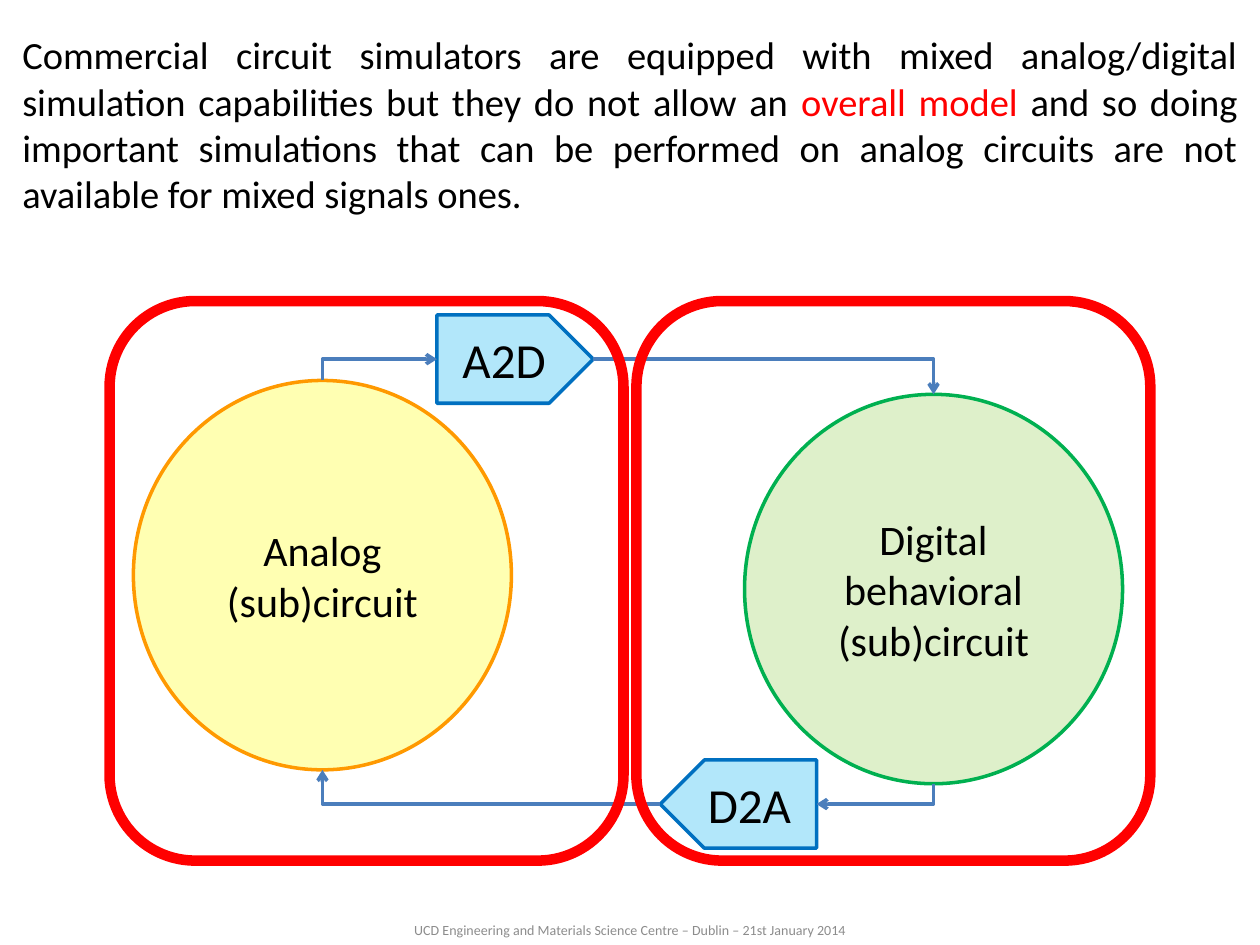
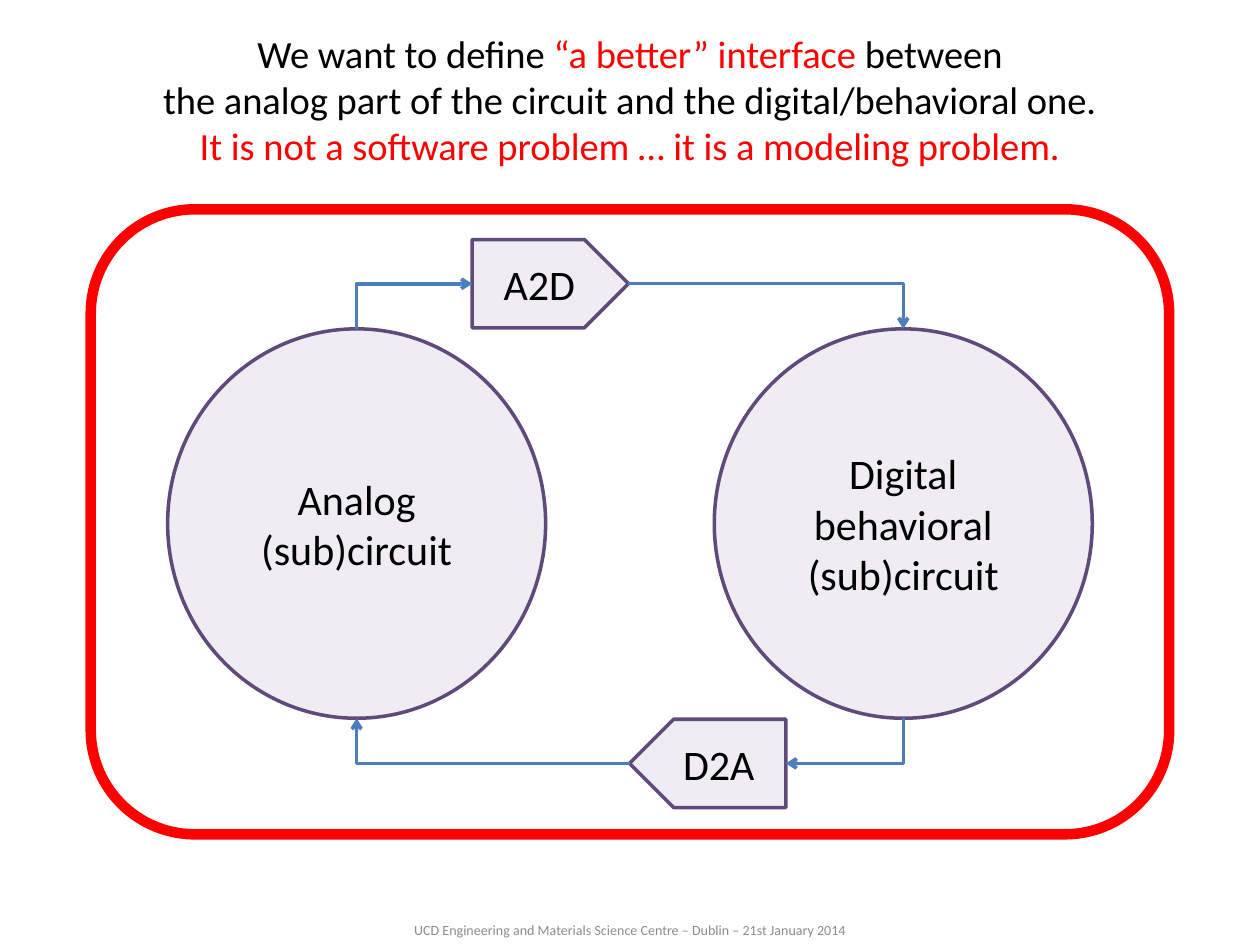
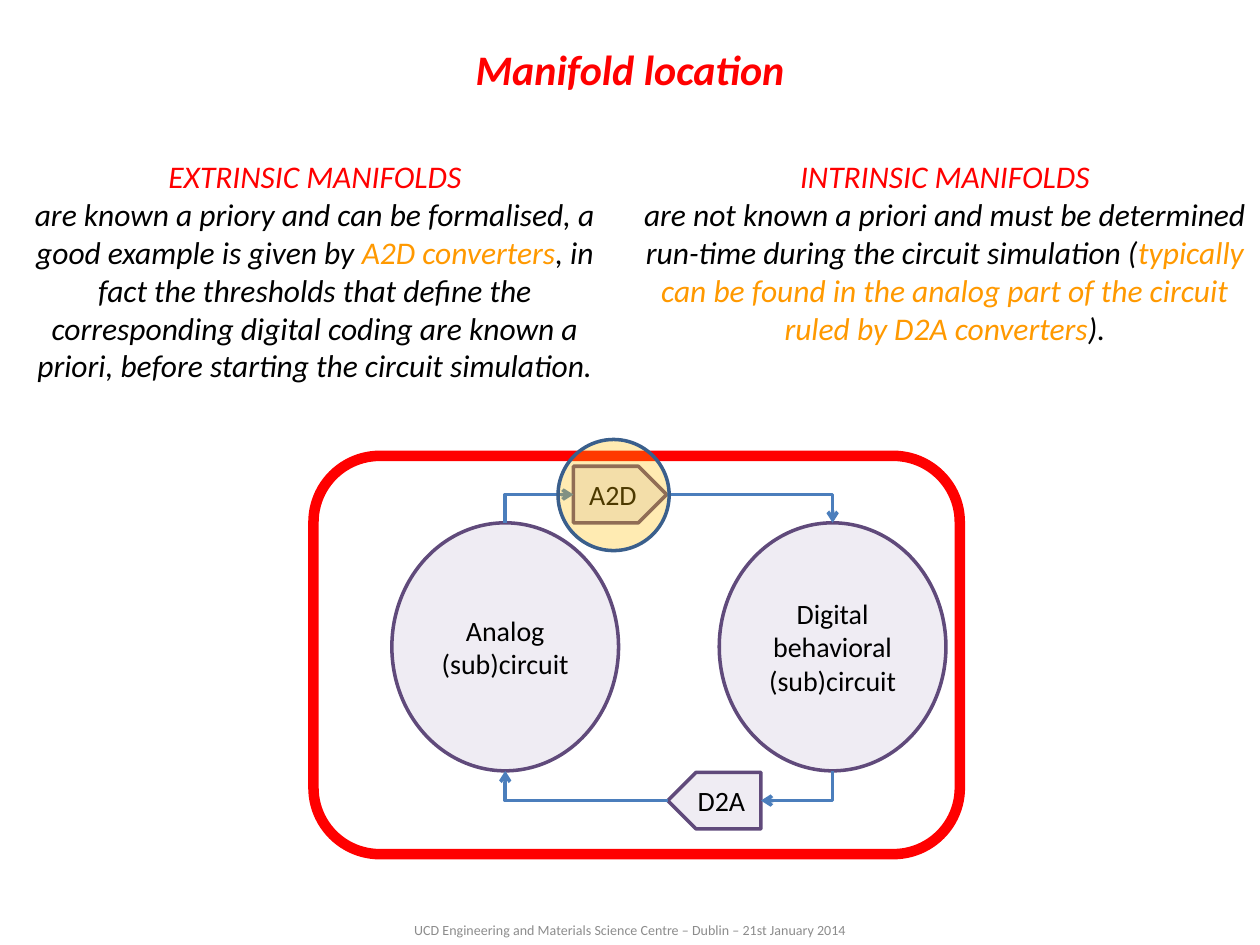
from lxml.etree import SubElement
from pptx import Presentation
from pptx.dml.color import RGBColor
from pptx.enum.shapes import MSO_CONNECTOR, MSO_SHAPE as SHAPE
from pptx.enum.text import MSO_ANCHOR as ANCHOR, PP_ALIGN as ALIGN
from pptx.oxml.ns import qn
from pptx.util import Cm, Pt

C = {"black": "000000", "white": "FFFFFF", "red": "FF0000", "orange": "FF9900",
     "grey": "8C8C8C", "yellow": "FFFF00", "lime": "92D050", "green": "00B050",
     "sky": "00B0F0", "blue": "0070C0", "lilac": "CCC1DA", "purple": "604A7B",
     "arrow": "4B7EBC", "amber": "FFC000", "navy": "3A5F8C"}
FONT = "Calibri"
FOOTER = "UCD Engineering and Materials Science Centre – Dublin – 21st January 2014"


def write(tf, paras, size, align=ALIGN.CENTER, anchor=ANCHOR.TOP, italic=False, bold=False):
    tf.word_wrap = True
    tf.vertical_anchor = anchor
    for i, runs in enumerate(paras):
        p = tf.paragraphs[0] if i == 0 else tf.add_paragraph()
        p.alignment = align
        for text, color in runs:
            r = p.add_run()
            r.text = text
            r.font.name, r.font.size = FONT, Pt(size)
            r.font.bold, r.font.italic = bold, italic
            r.font.color.rgb = RGBColor.from_string(C[color])


def add_box(s, kind, box, fill, line, width=2, alpha=30):
    sp = s.shapes.add_shape(kind, *[Cm(v) for v in box])
    sp.shadow.inherit = False
    sp.line.color.rgb = RGBColor.from_string(C[line])
    sp.line.width = Pt(width)
    if fill is None:
        sp.fill.background()
        return sp
    sp.fill.solid()
    sp.fill.fore_color.rgb = RGBColor.from_string(C[fill])
    if alpha < 100:
        color = sp.fill._xPr.find(qn("a:solidFill"))[0]
        SubElement(color, qn("a:alpha")).set("val", str(alpha * 1000))
    return sp


lilac = ("lilac", "purple")
slides = [
    {"title": None,
     "texts": [((0.2, 0.51, 25, 4.01), 22, ALIGN.JUSTIFY, False, [
         [("Commercial circuit simulators are equipped with mixed analog/digital simulation "
           "capabilities but they do not allow an ", "black"),
          ("overall model", "red"),
          (" and so doing important simulations that can be performed on analog circuits "
           "are not available for mixed signals ones.", "black")]])],
     "back": [],
     "circle": (7.62, 7.85), "plate": (3.15, 1.78), "sizes": (24, 28),
     "analog": (2.69, 7.67), "digital": (15.01, 7.95),
     "a2d": (8.81, 6.35), "d2a": (13.31, 15.32),
     "colors": [("yellow", "orange"), ("lime", "green"), ("sky", "blue")],
     "front": [(SHAPE.ROUNDED_RECTANGLE, (x, 6.07, 10.36, 11.28), None, "red", 6)
               for x in (2.21, 12.83)]},
    {"title": None,
     "texts": [((0.2, 0.48, 25, 3.07), 22, ALIGN.CENTER, False, [
         [("We want to define ", "black"), ("“a better” interface", "red"), (" between", "black")],
         [("the analog part of the circuit and the digital/behavioral one.", "black")],
         [("It is not a software problem … it is a modeling problem.", "red")]])],
     "back": [(SHAPE.ROUNDED_RECTANGLE, (1.83, 4.22, 21.74, 12.6), "white", "red", 6, 100)],
     "circle": (7.62, 7.85), "plate": (3.15, 1.78), "sizes": (24, 24),
     "analog": (3.38, 6.63), "digital": (14.4, 6.63),
     "a2d": (9.52, 4.83), "d2a": (12.69, 14.5),
     "colors": [lilac] * 3,
     "front": []},
    {"title": "Manifold location",
     "texts": [
         ((0, 3.05, 12.7, 4.87), 18, ALIGN.CENTER, True, [
             [("EXTRINSIC MANIFOLDS", "red")],
             [("are known a priory and can be formalised, a good example is given by ", "black"),
              ("A2D converters", "orange"),
              (", in fact the thresholds that deﬁne the corresponding digital coding are known "
               "a priori, before starting the circuit simulation.", "black")]]),
         ((12.7, 3.05, 12.7, 4.11), 18, ALIGN.CENTER, True, [
             [("INTRINSIC MANIFOLDS", "red")],
             [("are not known a priori and must be determined run-time during the circuit "
               "simulation (", "black"),
              ("typically can be found in the analog part of the circuit ruled by "
               "D2A converters", "orange"),
              (").", "black")]])],
     "back": [(SHAPE.ROUNDED_RECTANGLE, (6.32, 9.19, 13.03, 8.03), "white", "red", 6, 100)],
     "circle": (4.57, 5), "plate": (1.88, 1.14), "sizes": (16, 16),
     "analog": (7.9, 10.54), "digital": (14.5, 10.54),
     "a2d": (11.56, 9.4), "d2a": (13.46, 15.57),
     "colors": [lilac] * 3,
     "front": [(SHAPE.OVAL, (11.25, 8.86, 2.24, 2.24), "amber", "navy")]},
]

prs = Presentation()
prs.slide_width, prs.slide_height = Cm(25.4), Cm(19.05)

for d in slides:
    s = prs.slides.add_slide(prs.slide_layouts[5 if d["title"] else 6])
    if d["title"]:
        t = s.shapes.title
        t.left, t.top, t.width, t.height = Cm(0), Cm(0.56), Cm(25.4), Cm(1.65)
        write(t.text_frame, [[(d["title"], "red")]], 24, anchor=ANCHOR.MIDDLE, italic=True, bold=True)

    tb = s.shapes.add_textbox(Cm(1.57), Cm(18.44), Cm(22.28), Cm(0.61))
    write(tb.text_frame, [[(FOOTER, "grey")]], 8, anchor=ANCHOR.MIDDLE)
    for box, size, align, italic, paras in d["texts"]:
        tb = s.shapes.add_textbox(*[Cm(v) for v in box])
        write(tb.text_frame, paras, size, align, italic=italic)

    for args in d["back"]:
        add_box(s, *args)

    circle_size, plate_size = d["sizes"]
    analog, digital, plate = d["colors"]
    for key, label, kind, dims, size, colors in [
            ("analog", "Analog (sub)circuit", SHAPE.OVAL, d["circle"], circle_size, analog),
            ("digital", "Digital behavioral (sub)circuit", SHAPE.OVAL, d["circle"], circle_size, digital),
            ("a2d", "A2D", SHAPE.PENTAGON, d["plate"], plate_size, plate),
            ("d2a", "D2A", SHAPE.PENTAGON, d["plate"], plate_size, plate)]:
        sp = add_box(s, kind, d[key] + dims, *colors)
        write(sp.text_frame, [[(label, "black")]], size, anchor=ANCHOR.MIDDLE)
        if key == "d2a":
            sp.rotation = 180
            sp._element.spPr.find(qn("a:xfrm")).set("flipV", "1")

    cw, ch = d["circle"]
    pw, ph = d["plate"]
    ax, ay = d["analog"][0] + cw / 2, d["analog"][1]
    dx, dy = d["digital"][0] + cw / 2, d["digital"][1]
    tx, ty = d["a2d"][0], d["a2d"][1] + ph / 2
    bx, by = d["d2a"][0], d["d2a"][1] + ph / 2
    for x1, y1, x2, y2, rot in [(tx + pw, ty, dx, dy, 0),
                                (dx, dy + ch, bx + pw, by, 90),
                                (bx, by, ax, ay + ch, 180),
                                (ax, ay, tx, ty, 270)]:
        w, h = abs(x2 - x1), abs(y2 - y1)
        if rot in (90, 270):
            w, h = h, w
        mx, my = (x1 + x2) / 2, (y1 + y2) / 2
        c = s.shapes.add_connector(MSO_CONNECTOR.ELBOW, Cm(mx - w / 2), Cm(my - h / 2),
                                   Cm(mx + w / 2), Cm(my + h / 2))
        c.line.color.rgb = RGBColor.from_string(C["arrow"])
        c.line.width = Pt(2)
        spPr = c._element.spPr
        spPr.find(qn("a:xfrm")).set("rot", str(rot * 60000))
        spPr.find(qn("a:prstGeom")).set("prst", "bentConnector2")
        SubElement(spPr.find(qn("a:ln")), qn("a:tailEnd")).set("type", "arrow")
        SubElement(spPr, qn("a:effectLst"))

    for args in d["front"]:
        add_box(s, *args)

prs.save("out.pptx")
